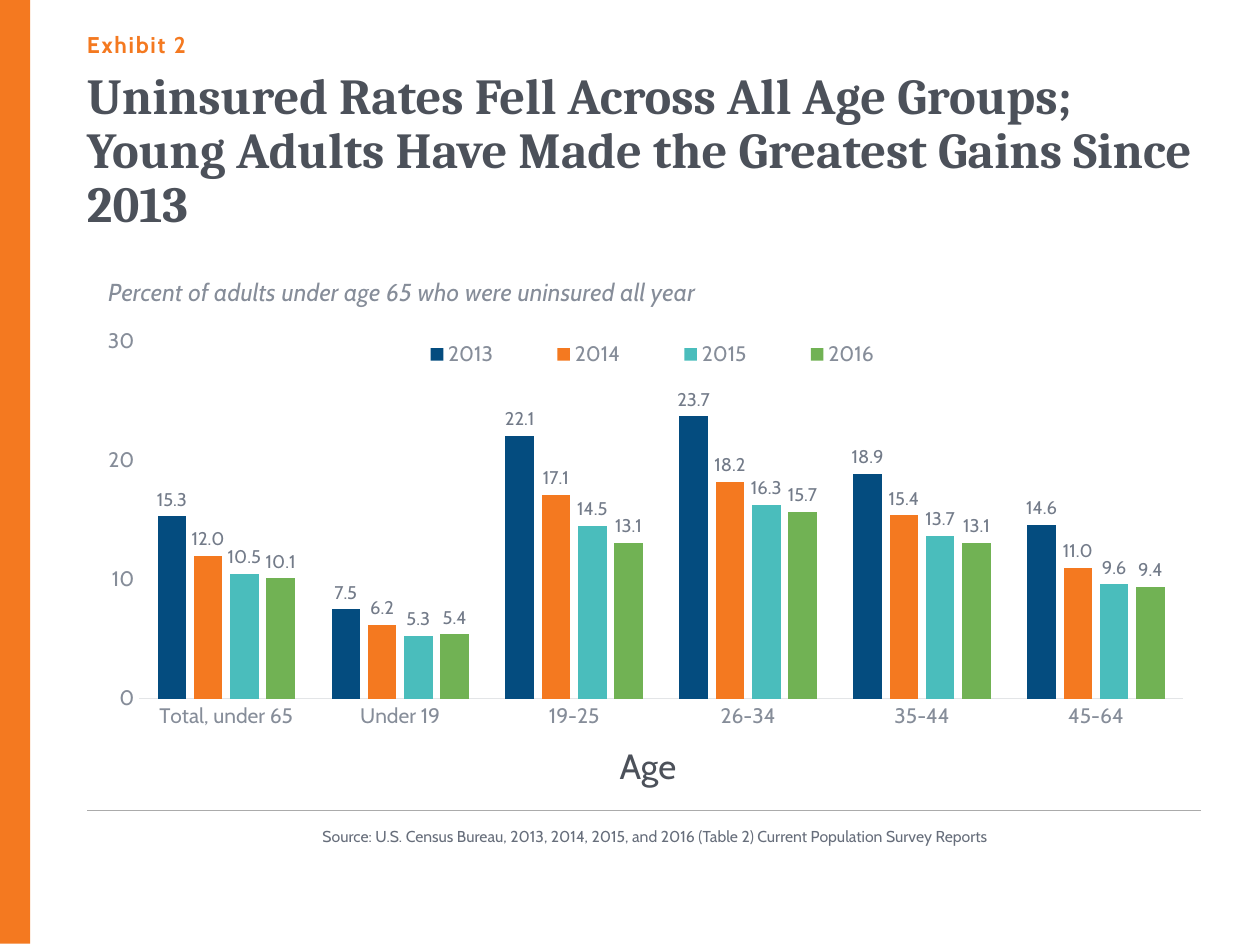
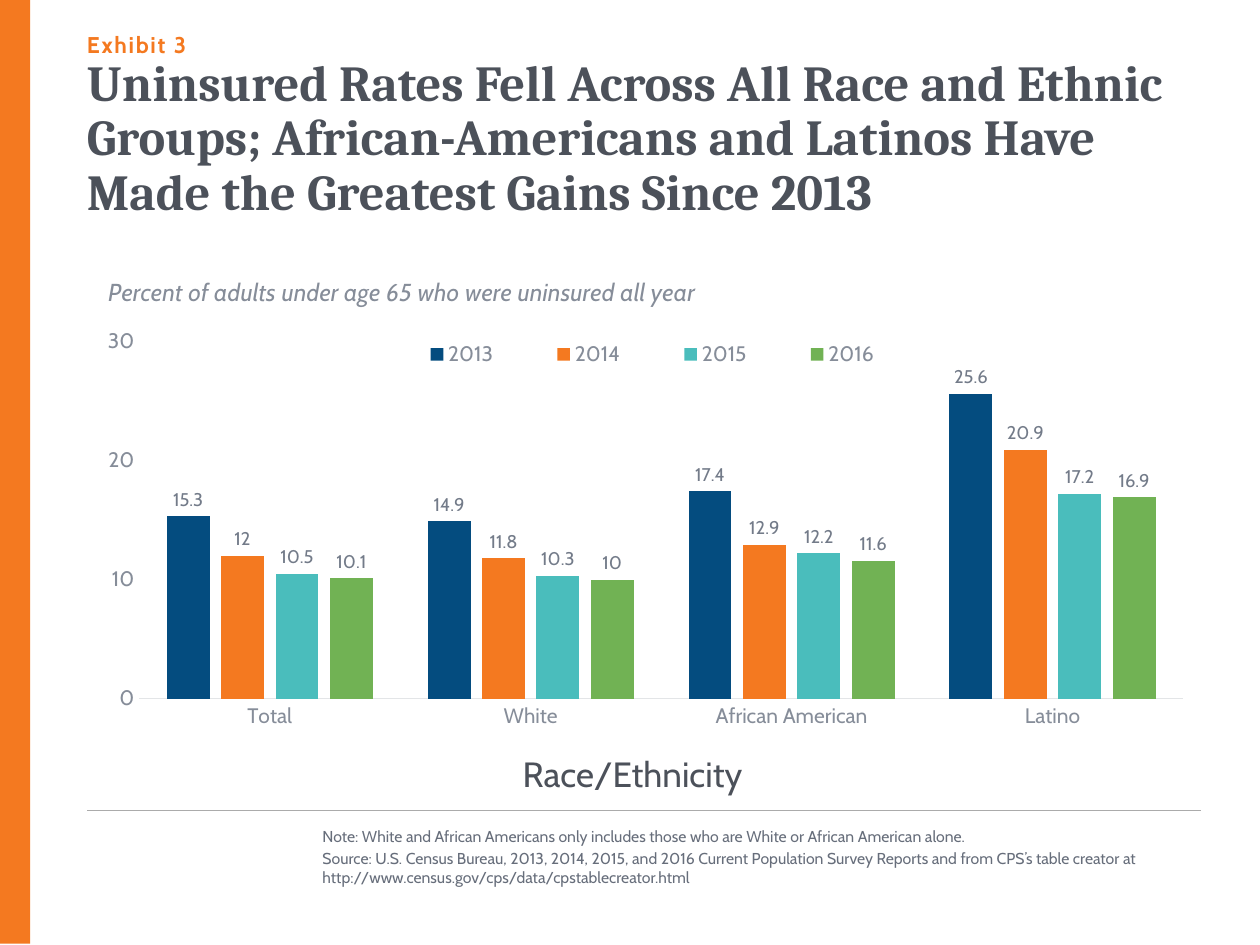
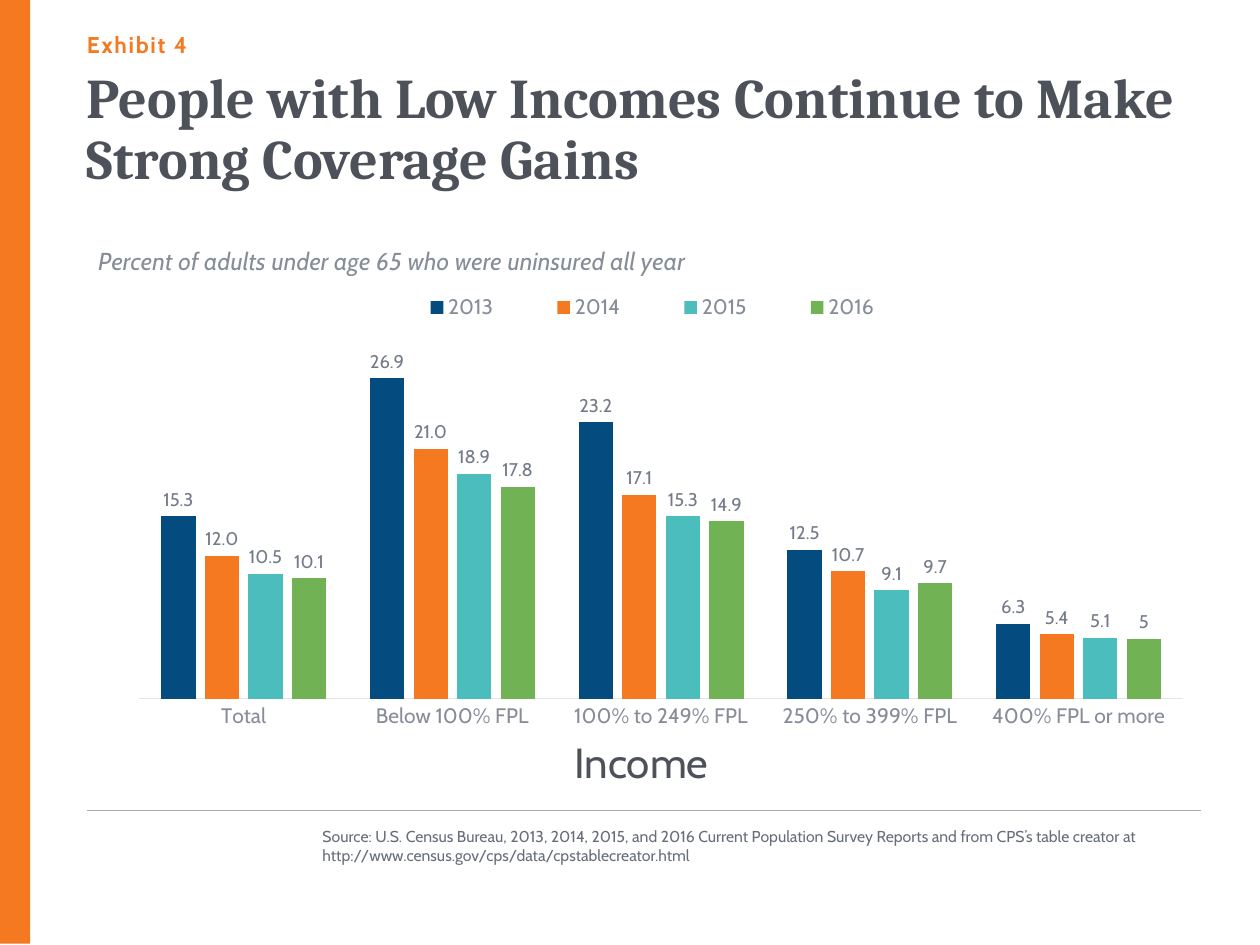
from dataclasses import dataclass

import pptx
import pptx.chart.data
import pptx.dml.color
import pptx.enum.chart
import pptx.enum.shapes
import pptx.enum.text
import pptx.oxml
import pptx.oxml.ns
import pptx.util

Pt = pptx.util.Pt
qn = pptx.oxml.ns.qn


@dataclass(frozen=True)
class Theme:
    heading_font: str = "Cambria"
    body_font: str = "Cabin"
    accent: str = "F47920"
    dark: str = "4C515A"
    muted: str = "868D99"
    label: str = "737B89"
    note: str = "676E7B"
    rule: str = "ABABAB"
    axis: str = "E3E5E7"
    years: tuple = ("044C7F", "F47920", "4ABDBC", "71B254")
    exhibit_size: float = 13
    subtitle_size: float = 14
    axis_size: float = 12
    label_size: float = 10.5
    chart_size: float = 10
    note_size: float = 9


THEME = Theme()
YEARS = ("2013", "2014", "2015", "2016")
LEFT, CONTENT_WIDTH = 49.7, 637.2
CENSUS_SOURCE = (
    "Source: U.S. Census Bureau, 2013, 2014, 2015, and 2016 Current Population Survey Reports "
    "and from CPS’s table creator at http://www.census.gov/cps/data/cpstablecreator.html"
)


def rgb(color):
    return pptx.dml.color.RGBColor.from_string(color)


def style_font(font, size, color, name=THEME.body_font, bold=False, italic=False):
    font.size, font.name = Pt(size), name
    font.bold, font.italic = bold, italic
    font.color.rgb = rgb(color)


def add_text(slide, paragraphs, left, top, width, height, size, color, inset=(0, 0), **font_style):
    box = slide.shapes.add_textbox(Pt(left), Pt(top), Pt(width), Pt(height))
    frame = box.text_frame
    frame.word_wrap = True
    frame.margin_left = frame.margin_right = Pt(inset[0])
    frame.margin_top = frame.margin_bottom = Pt(inset[1])
    frame.text = "\n".join(paragraphs)
    for index, paragraph in enumerate(frame.paragraphs):
        if index:
            paragraph.space_before = Pt(size * 0.2)
        for run in paragraph.runs:
            style_font(run.font, size, color, **font_style)
    return frame


def add_band_and_rule(slide):
    band = slide.shapes.add_shape(
        pptx.enum.shapes.MSO_SHAPE.RECTANGLE, Pt(0), Pt(-0.7), Pt(17.3), Pt(540))
    band.shadow.inherit = False
    band.fill.solid()
    band.fill.fore_color.rgb = rgb(THEME.accent)
    band.line.fill.background()

    rule = slide.shapes.add_connector(
        pptx.enum.shapes.MSO_CONNECTOR.STRAIGHT, Pt(686.2), Pt(463), Pt(LEFT), Pt(463))
    rule.line.color.rgb = rgb(THEME.rule)
    rule.line.width = Pt(0.75)
    rule._element.spPr.append(pptx.oxml.parse_xml(
        f'<a:effectLst {pptx.oxml.ns.nsdecls("a")}/>'))


def add_heading(slide, exhibit, title, top, size):
    frame = add_text(slide, [exhibit], LEFT, 13.7, CONTENT_WIDTH, 19.4,
                     THEME.exhibit_size, THEME.accent, bold=True)
    frame.vertical_anchor = pptx.enum.text.MSO_ANCHOR.BOTTOM
    frame.paragraphs[0].runs[0].font._element.set("spc", "100")

    frame = add_text(slide, [title], LEFT, top, CONTENT_WIDTH, 93.6,
                     size, THEME.dark, name=THEME.heading_font, bold=True)
    frame.paragraphs[0].line_spacing = 0.9


def set_layout(element, x, y, w=None, h=None):
    """Place a chart part by fractions of the chart's size."""
    for old in element.findall(qn("c:layout")):
        element.remove(old)
    inner = element.tag == qn("c:plotArea")
    settings = [("layoutTarget", "inner")] if inner else []
    settings += [("xMode", "edge"), ("yMode", "edge"), ("x", x), ("y", y)]
    if w is not None:
        settings += [("w", w), ("h", h)]
    items = "".join(f'<c:{tag} val="{value}"/>' for tag, value in settings)
    layout = pptx.oxml.parse_xml(
        f'<c:layout {pptx.oxml.ns.nsdecls("c")}><c:manualLayout>{items}</c:manualLayout></c:layout>')
    if inner:
        element.insert(0, layout)
    else:
        element.find(qn("c:overlay")).addprevious(layout)


def style_axes(chart, show_values):
    no_tick = pptx.enum.chart.XL_TICK_MARK.NONE
    for axis in (chart.category_axis, chart.value_axis):
        axis.major_tick_mark = axis.minor_tick_mark = no_tick
        axis.has_major_gridlines = False
        style_font(axis.tick_labels.font, THEME.axis_size, THEME.muted)
    chart.category_axis.format.line.color.rgb = rgb(THEME.axis)
    chart.category_axis.format.line.width = Pt(0.75)

    values = chart.value_axis
    values.minimum_scale, values.maximum_scale, values.major_unit = 0, 30, 10
    values.tick_labels.number_format = "0"
    values.tick_labels.number_format_is_linked = False
    values.format.line.fill.background()
    values.visible = show_values


def style_columns(chart, one_decimal_years):
    plot = chart.plots[0]
    plot.vary_by_categories = False
    plot.gap_width, plot.overlap = 128, -27
    for series, color in zip(plot.series, THEME.years):
        series.format.fill.solid()
        series.format.fill.fore_color.rgb = rgb(color)
        series.invert_if_negative = False
        labels = series.data_labels
        labels.show_value = True
        labels.position = pptx.enum.chart.XL_LABEL_POSITION.OUTSIDE_END
        labels.number_format = "0.0" if series.name in one_decimal_years else "General"
        labels.number_format_is_linked = False
        style_font(labels.font, THEME.label_size, THEME.label)


def add_rate_chart(slide, rates, one_decimal_years=(), show_values=True,
                   subtitle_at=(0.015, 0.064), legend_top=0.185):
    """Draw uninsured rates, given as {group: one rate per year}."""
    data = pptx.chart.data.CategoryChartData()
    data.categories = list(rates)
    for year, values in zip(YEARS, zip(*rates.values())):
        data.add_series(year, values)
    chart = slide.shapes.add_chart(
        pptx.enum.chart.XL_CHART_TYPE.COLUMN_CLUSTERED,
        Pt(LEFT), Pt(133.9), Pt(CONTENT_WIDTH), Pt(319), data).chart
    style_font(chart.font, THEME.chart_size, THEME.dark)

    subtitle = chart.chart_title
    subtitle.text_frame.text = "Percent of adults under age 65 who were uninsured all year"
    style_font(subtitle.text_frame.paragraphs[0].runs[0].font,
               THEME.subtitle_size, THEME.muted, italic=True)
    set_layout(subtitle._element, *subtitle_at)

    chart.has_legend = True
    chart.legend.position = pptx.enum.chart.XL_LEGEND_POSITION.BOTTOM
    chart.legend.include_in_layout = False
    style_font(chart.legend.font, THEME.axis_size, THEME.muted)
    set_layout(chart.legend._element, 0.257, legend_top, 0.5, 0.06)

    style_axes(chart, show_values)
    style_columns(chart, one_decimal_years)
    set_layout(chart._chartSpace.chart.plotArea, 0.047, 0.192, 0.936, 0.64)


def add_axis_caption(slide, caption, left, top, width, height, size=20):
    frame = add_text(slide, [caption], left, top, width, height, size, THEME.dark, inset=(7.2, 3.6))
    frame.auto_size = pptx.enum.text.MSO_AUTO_SIZE.SHAPE_TO_FIT_TEXT


def add_exhibit(deck, number, title, notes, caption, chart, title_top=40.3, title_size=28.8):
    slide = deck.slides.add_slide(deck.slide_layouts[6])
    add_band_and_rule(slide)
    add_rate_chart(slide, **chart)
    add_text(slide, notes, 184.3, 472.3, 501.8, 61.2, THEME.note_size, THEME.note)
    add_heading(slide, f"Exhibit {number}", title, title_top, title_size)
    add_axis_caption(slide, *caption)


def main():
    deck = pptx.Presentation()
    deck.slide_width, deck.slide_height = Pt(720), Pt(540)

    add_exhibit(
        deck, 2,
        "Uninsured Rates Fell Across All Age Groups; "
        "Young Adults Have Made the Greatest Gains Since 2013",
        ["Source: U.S. Census Bureau, 2013, 2014, 2015, and 2016 (Table 2) "
         "Current Population Survey Reports"],
        ("Age", 347, 422, 61.2, 31.7),
        dict(rates={
            "Total, under 65": (15.3, 12, 10.5, 10.1),
            "Under 19": (7.5, 6.2, 5.3, 5.4),
            "19-25": (22.1, 17.1, 14.5, 13.1),
            "26-34": (23.7, 18.2, 16.3, 15.7),
            "35-44": (18.9, 15.4, 13.7, 13.1),
            "45-64": (14.6, 11, 9.6, 9.4),
        }, one_decimal_years=("2013", "2014")))

    add_exhibit(
        deck, 3,
        "Uninsured Rates Fell Across All Race and Ethnic Groups; "
        "African-Americans and Latinos Have Made the Greatest Gains Since 2013",
        ["Note: White and African Americans only includes those who are White "
         "or African American alone.", CENSUS_SOURCE],
        ("Race/Ethnicity", 291.6, 426.2, 152.6, 31.7),
        dict(rates={
            "Total": (15.3, 12, 10.5, 10.1),
            "White": (14.9, 11.8, 10.3, 10),
            "African American": (17.4, 12.9, 12.2, 11.6),
            "Latino": (25.6, 20.9, 17.2, 16.9),
        }),
        title_top=33.1)

    add_exhibit(
        deck, 4,
        "People with Low Incomes Continue to Make Strong Coverage Gains",
        [CENSUS_SOURCE],
        ("Income", 321.1, 417.6, 93.6, 36, 24),
        dict(rates={
            "Total": (15.3, 12, 10.5, 10.1),
            "Below 100% FPL": (26.9, 21, 18.9, 17.8),
            "100% to 249% FPL": (23.2, 17.1, 15.3, 14.9),
            "250% to 399% FPL": (12.5, 10.7, 9.1, 9.7),
            "400% FPL or more": (6.3, 5.4, 5.1, 5),
        }, one_decimal_years=("2014",), show_values=False,
            subtitle_at=(0.006, 0.01), legend_top=0.101),
        title_size=32)

    deck.save("out.pptx")


if __name__ == "__main__":
    main()
